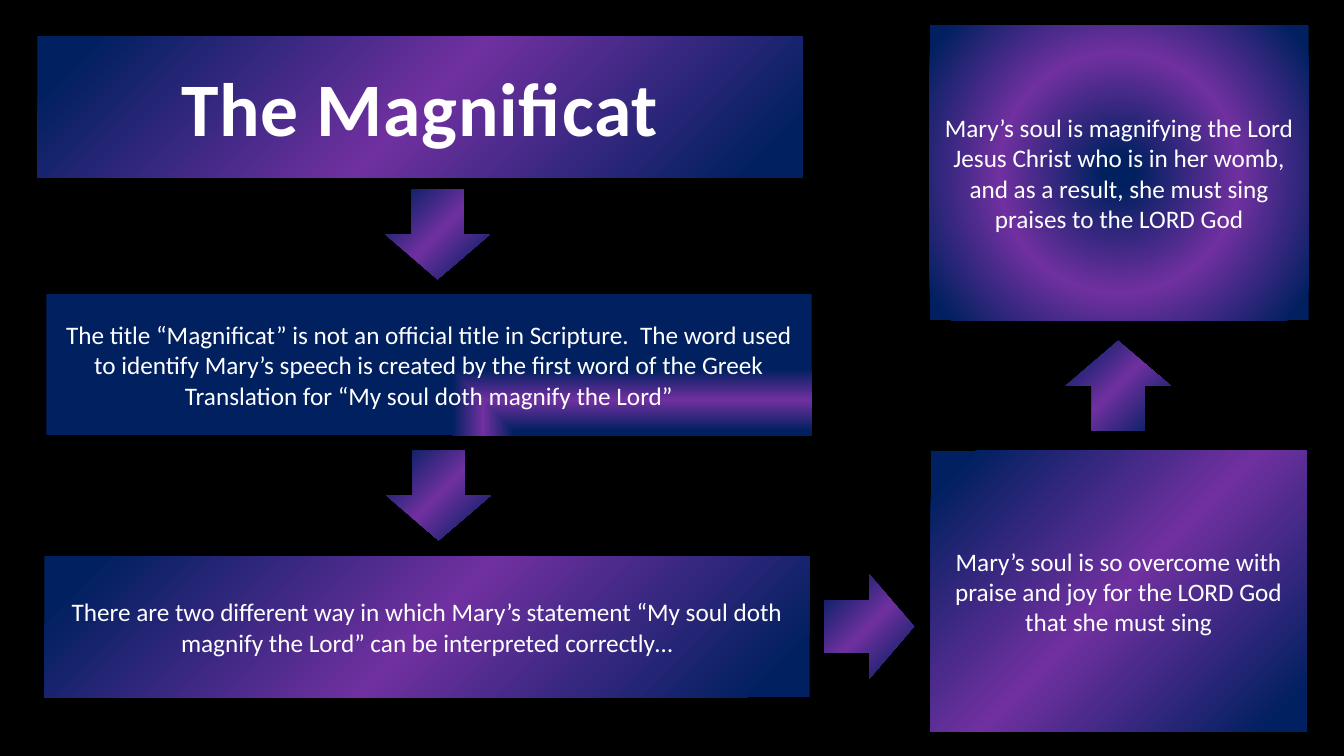
from pptx import Presentation
from pptx import util as u
from pptx.dml.color import RGBColor
from pptx.enum import shapes, text
from pptx.oxml import parse_xml
from pptx.oxml.ns import nsdecls, qn

BLACK = RGBColor(0x00, 0x00, 0x00)
WHITE = RGBColor(0xFF, 0xFF, 0xFF)
NAVY = RGBColor(0x00, 0x20, 0x60)
PURPLE = RGBColor(0x70, 0x30, 0xA0)

STOPS = ((6, NAVY), (50, PURPLE), (94, NAVY))
CORNER = {"l": 100000, "t": 100000}
CENTRE = {side: 50000 for side in "ltrb"}
DIAGONAL = '<a:lin ang="2700000" scaled="0"/>'

WIDE, BAND_HEIGHT = 7.59, 1.4
ARROW_WIDTH, ARROW_HEIGHT = 1.04, 0.89


def path_direction(kind, focus):
    sides = " ".join(f'{side}="{value}"' for side, value in focus.items())
    return f'<a:path path="{kind}"><a:fillToRect {sides}/></a:path>'


CORNER_CIRCLE = path_direction("circle", CORNER)
CORNER_RECT = path_direction("rect", CORNER)
CENTRE_CIRCLE = path_direction("circle", CENTRE)


def write_text(shape, wording, size=18, bold=False, wrap=True, spacing=None):
    frame = shape.text_frame
    frame.word_wrap = wrap
    frame.vertical_anchor = text.MSO_ANCHOR.MIDDLE
    paragraph = frame.paragraphs[0]
    paragraph.alignment = text.PP_ALIGN.CENTER
    run = paragraph.add_run()
    run.text = wording
    run.font.name = "Calibri"
    run.font.size = u.Pt(size)
    run.font.bold = bold
    run.font.color.rgb = WHITE
    if spacing:
        run.font._element.set("spc", str(int(spacing * 100)))


class MagnificatSlide:
    def __init__(self, presentation):
        self.slide = presentation.slides.add_slide(presentation.slide_layouts[5])
        fill = self.slide.background.fill
        fill.solid()
        fill.fore_color.rgb = BLACK

    def gradient_shape(self, kind, left, top, width, height, direction):
        shape = self.slide.shapes.add_shape(
            kind, u.Inches(left), u.Inches(top), u.Inches(width), u.Inches(height))
        shape.shadow.inherit = False
        shape.line.fill.background()
        shape.fill.background()
        stops = "".join(
            f'<a:gs pos="{position * 1000}"><a:srgbClr val="{color}"/></a:gs>'
            for position, color in STOPS)
        gradient = parse_xml(
            f'<a:gradFill {nsdecls("a")} rotWithShape="1">'
            f"<a:gsLst>{stops}</a:gsLst>{direction}</a:gradFill>")
        properties = shape.element.spPr
        properties.replace(properties.find(qn("a:noFill")), gradient)
        return shape

    def panel(self, left, top, width, height, direction, wording=None):
        shape = self.gradient_shape(
            shapes.MSO_SHAPE.RECTANGLE, left, top, width, height, direction)
        if wording:
            write_text(shape, wording)
        return shape

    def arrow(self, left, top, rotation=0):
        shape = self.gradient_shape(
            shapes.MSO_SHAPE.DOWN_ARROW, left, top, ARROW_WIDTH, ARROW_HEIGHT, CORNER_CIRCLE)
        shape.rotation = rotation

    def title(self, wording, left, top, width, height, backdrop):
        title = self.slide.shapes.title
        title.left, title.top = u.Inches(left), u.Inches(top)
        title.width, title.height = u.Inches(width), u.Inches(height)
        title.text_frame.auto_size = text.MSO_AUTO_SIZE.SHAPE_TO_FIT_TEXT
        write_text(title, wording, size=54, bold=True, wrap=False, spacing=0.5)
        backdrop.element.addnext(title.element)


def main():
    presentation = Presentation()
    presentation.slide_width = u.Inches(13.33)
    presentation.slide_height = u.Inches(7.5)
    page = MagnificatSlide(presentation)

    backdrop = page.panel(0.37, 0.36, WIDE, BAND_HEIGHT, CORNER_CIRCLE)
    page.title("The Magnificat", 1.67, 0.55, 4.99, 1.01, backdrop)
    page.arrow(3.82, 1.88)
    page.panel(
        0.46, 2.92, WIDE, BAND_HEIGHT, CORNER_RECT,
        "The title “Magnificat” is not an official title in Scripture.  The word used "
        "to identify Mary’s speech is created by the first word of the Greek "
        "Translation for “My soul doth magnify the Lord”")
    page.panel(
        0.44, 5.52, WIDE, BAND_HEIGHT, DIAGONAL,
        "There are two different way in which Mary’s statement “My soul doth "
        "magnify the Lord” can be interpreted correctly…")
    page.arrow(3.83, 4.47)
    page.arrow(8.1, 5.77, rotation=270)
    page.panel(
        9.23, 4.47, 3.73, 2.79, CORNER_CIRCLE,
        "Mary’s soul is so overcome with praise and joy for the LORD God "
        "that she must sing")
    page.arrow(10.57, 3.38, rotation=180)
    page.panel(
        9.22, 0.25, 3.76, 2.93, CENTRE_CIRCLE,
        "Mary’s soul is magnifying the Lord Jesus Christ who is in her womb, "
        "and as a result, she must sing praises to the LORD God")

    presentation.save("out.pptx")


if __name__ == "__main__":
    main()
